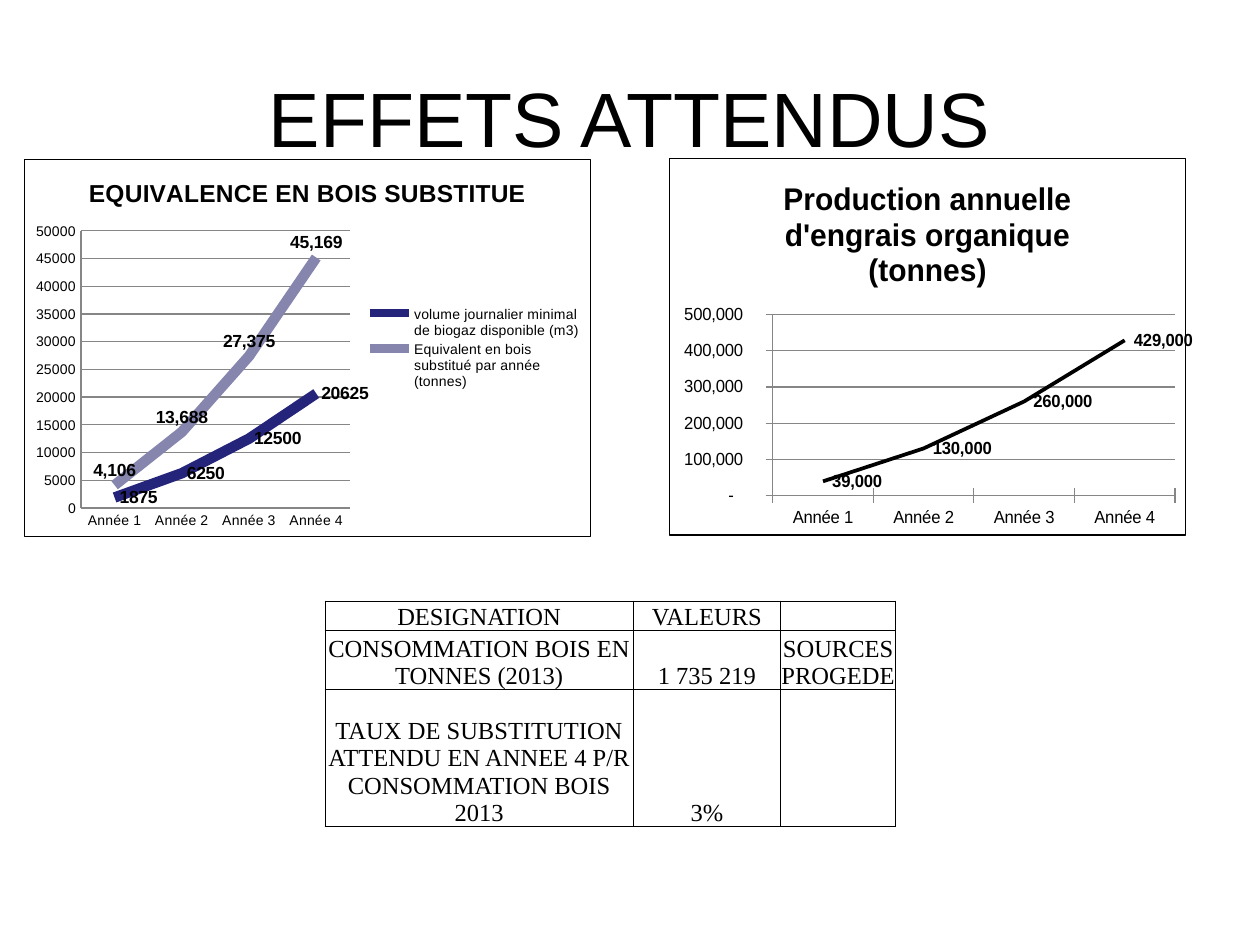
from lxml.etree import SubElement
from pptx import Presentation
from pptx.chart.data import CategoryChartData
from pptx.dml.color import RGBColor
from pptx.enum.chart import XL_CHART_TYPE as ChartType, XL_LABEL_POSITION as LabelSide
from pptx.enum.chart import XL_LEGEND_POSITION as LegendSide, XL_TICK_MARK as Tick
from pptx.enum.text import MSO_ANCHOR as Anchor, PP_ALIGN as Align
from pptx.oxml import parse_xml
from pptx.oxml.ns import nsdecls, qn
from pptx.util import Inches, Pt

WIDTH, HEIGHT = 10, 7.5
COLORS = {"ink": "000000", "paper": "FFFFFF", "grid": "868686",
          "biogas": "24247A", "wood": "8585AD"}
YEARS = ["Année 1", "Année 2", "Année 3", "Année 4"]
ACCOUNTING = r'_-* #,##0\ _€_-;\-* #,##0\ _€_-;_-* "-"?\ _€_-'

TITLE_BOX = (0.05, 0.04, 0.9, 0.167)
WOOD_BOX = (0.019, 0.168, 0.45, 0.4)
FERTILIZER_BOX = (0.531, 0.167, 0.43, 0.4)
TABLE_BOX = (0.258, 0.636, 0.453, 0.232)

WOOD_CHART = {
    "title": "EQUIVALENCE EN BOIS SUBSTITUE", "title_size": 14, "size": 8,
    "border": 0.5, "tick": Tick.NONE, "top": 50000, "step": 5000, "axis_format": "General",
    "plot": (0.1, 0.19, 0.475, 0.735), "legend": (0.6, 0.38, 0.39, 0.24), "line": 6,
    "series": [
        ("volume journalier minimal de biogaz disponible (m3)",
         [1875, 6250, 12500, 20625], "biogas", LabelSide.RIGHT, "General"),
        ("Equivalent en bois substitué par année (tonnes)",
         [4106, 13688, 27375, 45169], "wood", LabelSide.ABOVE, "#,##0"),
    ],
}
FERTILIZER_NAME = "Production annuelle d'engrais organique (tonnes)"
FERTILIZER_CHART = {
    "title": FERTILIZER_NAME, "title_size": 18, "size": 10,
    "border": 0.75, "tick": Tick.CROSS, "top": 500000, "step": 100000,
    "axis_format": ACCOUNTING,
    "plot": (0.2, 0.415, 0.78, 0.48), "legend": None, "line": 2.25,
    "series": [(FERTILIZER_NAME, [39000, 130000, 260000, 429000],
                "ink", LabelSide.RIGHT, ACCOUNTING)],
}
COLUMN_SHARES = (0.54, 0.258, 0.202)
ROW_SHARES = (0.125, 0.25, 0.625)
TABLE_ROWS = [
    ("DESIGNATION", "VALEURS", ""),
    ("CONSOMMATION BOIS EN TONNES (2013)", "1 735 219", "SOURCES PROGEDE"),
    ("TAUX DE SUBSTITUTION ATTENDU EN ANNEE 4 P/R CONSOMMATION BOIS 2013", "3%", ""),
]


def place(box):
    left, top, width, height = box
    return (Inches(left * WIDTH), Inches(top * HEIGHT),
            Inches(width * WIDTH), Inches(height * HEIGHT))


def style_font(font, size, bold=False, name="Arial"):
    font.name, font.size, font.bold = name, Pt(size), bold
    font.color.rgb = RGBColor.from_string(COLORS["ink"])


def style_line(line, color, width):
    line.color.rgb = RGBColor.from_string(COLORS[color])
    line.width = Pt(width)


def set_layout(parent, index, shares, inner=False):
    for old in parent.findall(qn("c:layout")):
        parent.remove(old)
    target = '<c:layoutTarget val="inner"/>' if inner else ""
    modes = '<c:xMode val="edge"/><c:yMode val="edge"/>'
    sizes = "".join(f'<c:{key} val="{share}"/>' for key, share in zip("xywh", shares))
    parent.insert(index, parse_xml(
        f'<c:layout {nsdecls("c")}><c:manualLayout>{target}{modes}{sizes}'
        '</c:manualLayout></c:layout>'))


def set_frame(chart, width):
    chart.font._element.getparent()
    text_style = chart._chartSpace.find(qn("c:txPr"))
    text_style.addprevious(parse_xml(
        f'<c:spPr {nsdecls("c", "a")}><a:solidFill><a:srgbClr val="{COLORS["paper"]}"/>'
        f'</a:solidFill><a:ln w="{Pt(width)}"><a:solidFill>'
        f'<a:srgbClr val="{COLORS["ink"]}"/></a:solidFill></a:ln></c:spPr>'))


def add_title(page, box):
    frame = page.shapes.add_textbox(*place(box)).text_frame
    frame.word_wrap = True
    frame.vertical_anchor = Anchor.MIDDLE
    frame.text = "EFFETS ATTENDUS"
    para = frame.paragraphs[0]
    para.alignment = Align.CENTER
    style_font(para.runs[0].font, 44)


def style_axes(chart, settings):
    for axis in (chart.category_axis, chart.value_axis):
        axis.major_tick_mark = settings["tick"]
        axis.minor_tick_mark = Tick.NONE
        style_font(axis.tick_labels.font, settings["size"])
        style_line(axis.format.line, "grid", 0.75)
    values = chart.value_axis
    values.minimum_scale, values.maximum_scale = 0, settings["top"]
    values.major_unit = settings["step"]
    values.has_major_gridlines = True
    style_line(values.major_gridlines.format.line, "grid", 0.75)
    values.tick_labels.number_format = settings["axis_format"]
    values.tick_labels.number_format_is_linked = False


def add_line_chart(page, box, settings):
    data = CategoryChartData()
    data.categories = YEARS
    for name, values, *_ in settings["series"]:
        data.add_series(name, values)
    chart = page.shapes.add_chart(ChartType.LINE, *place(box), data).chart
    style_font(chart.font, settings["size"])
    set_frame(chart, settings["border"])
    chart.has_title = True
    heading = chart.chart_title.text_frame
    heading.text = settings["title"]
    style_font(heading.paragraphs[0].runs[0].font, settings["title_size"], True)
    style_axes(chart, settings)
    set_layout(chart._chartSpace.chart.plotArea, 0, settings["plot"], inner=True)

    chart.plots[0].vary_by_categories = False
    for series, (_, _, color, side, number_format) in zip(
            chart.plots[0].series, settings["series"]):
        series.smooth = False
        style_line(series.format.line, color, settings["line"])
        labels = series.data_labels
        labels.show_value = True
        labels.position = side
        labels.number_format = number_format
        labels.number_format_is_linked = False
        style_font(labels.font, 10, True)

    chart.has_legend = settings["legend"] is not None
    if chart.has_legend:
        chart.legend.position = LegendSide.RIGHT
        chart.legend.include_in_layout = False
        style_font(chart.legend.font, settings["size"])
        set_layout(chart.legend._element, 1, settings["legend"])


def style_cell(cell, text):
    cell.text = text
    cell.vertical_anchor = Anchor.BOTTOM
    cell.margin_left = cell.margin_right = cell.margin_top = cell.margin_bottom = 0
    para = cell.text_frame.paragraphs[0]
    para.alignment = Align.CENTER
    for span in para.runs:
        style_font(span.font, 14, name="Times New Roman")
    if not text:
        SubElement(para._p, qn("a:endParaRPr"), sz="1400")
    properties = cell._tc.get_or_add_tcPr()
    for side in "LRTB":
        properties.append(parse_xml(
            f'<a:ln{side} {nsdecls("a")} w="{Pt(0.5)}"><a:solidFill>'
            f'<a:srgbClr val="{COLORS["ink"]}"/></a:solidFill></a:ln{side}>'))
    cell.fill.background()


def add_values_table(page, box):
    left, top, width, height = place(box)
    table = page.shapes.add_table(
        len(ROW_SHARES), len(COLUMN_SHARES), left, top, width, height).table
    table.first_row = table.horz_banding = False
    for column, share in zip(table.columns, COLUMN_SHARES):
        column.width = int(width * share)
    for row, share, texts in zip(table.rows, ROW_SHARES, TABLE_ROWS):
        row.height = int(height * share)
        for cell, text in zip(row.cells, texts):
            style_cell(cell, text)


def main():
    deck = Presentation()
    deck.slide_width, deck.slide_height = Inches(WIDTH), Inches(HEIGHT)
    page = deck.slides.add_slide(deck.slide_layouts[6])
    add_title(page, TITLE_BOX)
    add_line_chart(page, WOOD_BOX, WOOD_CHART)
    add_line_chart(page, FERTILIZER_BOX, FERTILIZER_CHART)
    add_values_table(page, TABLE_BOX)
    deck.save("out.pptx")


if __name__ == "__main__":
    main()
